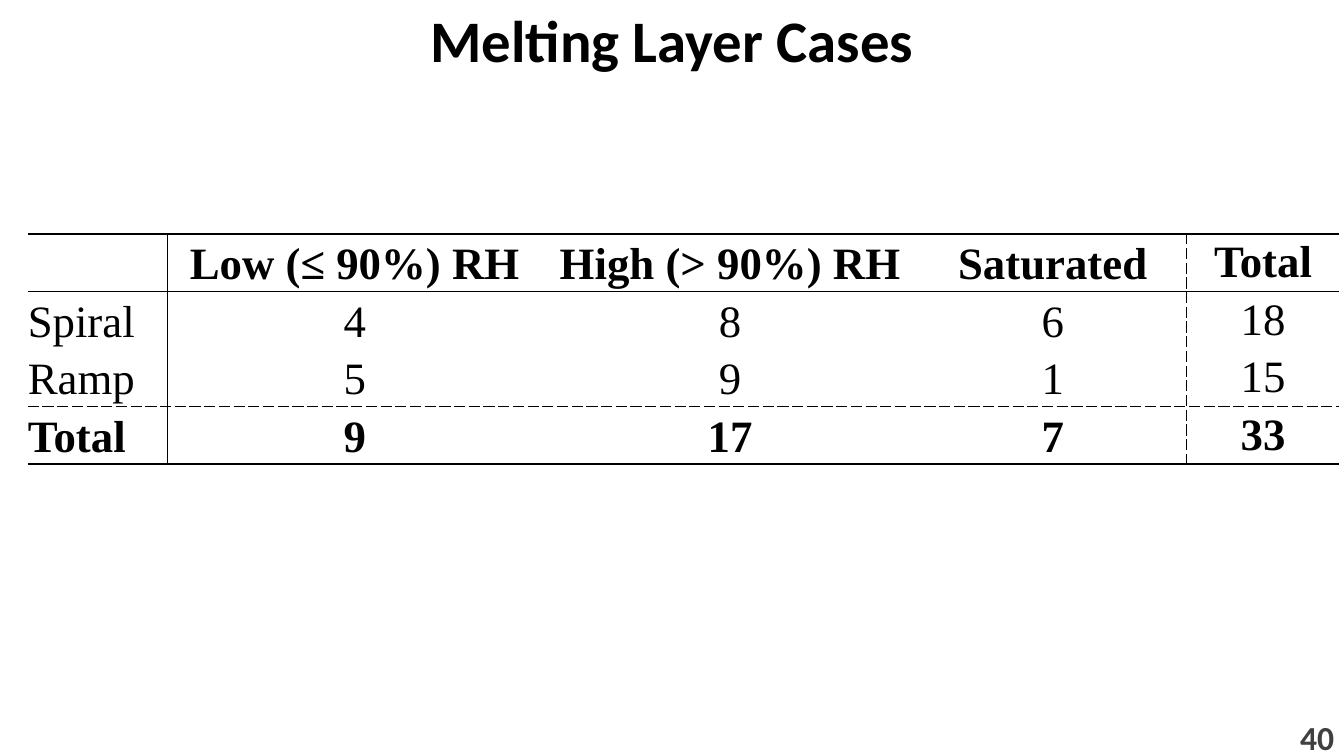
from lxml import etree
from pptx import Presentation
from pptx import util as u
from pptx.dml.color import RGBColor
from pptx.enum import text
from pptx.oxml.ns import qn

INK = {"black": "000000", "gray": "404040", "white": "FFFFFF"}
WIDTHS = [3.53, 9.42, 9.5, 6.76, 3.84]
HEIGHT = 1.35
CASES = [
    ["", "Low (≤ 90%) RH", "High (> 90%) RH", "Saturated", "Total"],
    ["Spiral", "4", "8", "6", "18"],
    ["Ramp", "5", "9", "1", "15"],
    ["Total", "9", "17", "7", "33"],
]
THICK, THIN, DASH = (1.5, "solid"), (1, "solid"), (1, "dash")
ACROSS = [THICK, THIN, None, DASH, THICK]
DOWN = [None, THIN, None, None, DASH, None]
ALIGN = text.PP_ALIGN
ANCHOR = text.MSO_ANCHOR


def style(para, face, size, ink, bold, align):
    para.alignment = align
    for run in para.runs:
        font = run.font
        font.name, font.size, font.bold = face, u.Pt(size), bold
        font.color.rgb = RGBColor.from_string(INK[ink])


def add_label(slide, words, place, size, ink, align):
    frame = slide.shapes.add_textbox(*map(u.Cm, place)).text_frame
    frame.word_wrap = True
    frame.vertical_anchor = ANCHOR.MIDDLE
    frame.text = words
    style(frame.paragraphs[0], "Calibri", size, ink, True, align)
    return frame.paragraphs[0]


def set_edges(cell, edges):
    props = cell._tc.get_or_add_tcPr()
    for spot, (side, edge) in enumerate(zip("LRTB", edges)):
        line = etree.Element(qn(f"a:ln{side}"))
        props.insert(spot, line)
        if edge is None:
            line.set("w", "0")
            etree.SubElement(line, qn("a:noFill"))
            continue
        width, dash = edge
        line.set("w", str(u.Pt(width)))
        fill = etree.SubElement(line, qn("a:solidFill"))
        etree.SubElement(fill, qn("a:srgbClr"), val=INK["black"])
        etree.SubElement(line, qn("a:prstDash"), val=dash)


def fill_cell(cell, words, row, col):
    cell.fill.solid()
    cell.fill.fore_color.rgb = RGBColor.from_string(INK["white"])
    cell.margin_left = cell.margin_right = 0
    cell.margin_top = cell.margin_bottom = 0
    last = col == len(WIDTHS) - 1
    cell.vertical_anchor = ANCHOR.TOP if last else ANCHOR.MIDDLE
    cell.text = words
    para = cell.text_frame.paragraphs[0]
    para.line_spacing = 1.07
    bold = row in (0, len(CASES) - 1)
    align = ALIGN.CENTER if col else ALIGN.LEFT
    style(para, "Times New Roman", 32, "black", bold, align)
    set_edges(cell, DOWN[col:col + 2] + ACROSS[row:row + 2])


def add_cases(slide, left, top):
    size = sum(WIDTHS), HEIGHT * len(CASES)
    place = map(u.Cm, (left, top, *size))
    table = slide.shapes.add_table(len(CASES), len(WIDTHS), *place).table
    table.first_row = table.horz_banding = False
    for col, width in zip(table.columns, WIDTHS):
        col.width = u.Cm(width)
    for row, words in enumerate(CASES):
        table.rows[row].height = u.Cm(HEIGHT)
        for col, word in enumerate(words):
            fill_cell(table.cell(row, col), word, row, col)


def main():
    deck = Presentation()
    deck.slide_width, deck.slide_height = u.Cm(33.87), u.Cm(19.05)
    slide = deck.slides.add_slide(deck.slide_layouts[6])
    title = add_label(slide, "Melting Layer Cases", (0, 0, 33.87, 2.18),
                      42, "black", ALIGN.CENTER)
    title.line_spacing = 0.9
    add_label(slide, "40", (26.25, 18.06, 7.62, 1.02),
              24, "gray", ALIGN.RIGHT)
    add_cases(slide, 0.7, 5.9)
    deck.save("out.pptx")


if __name__ == "__main__":
    main()
